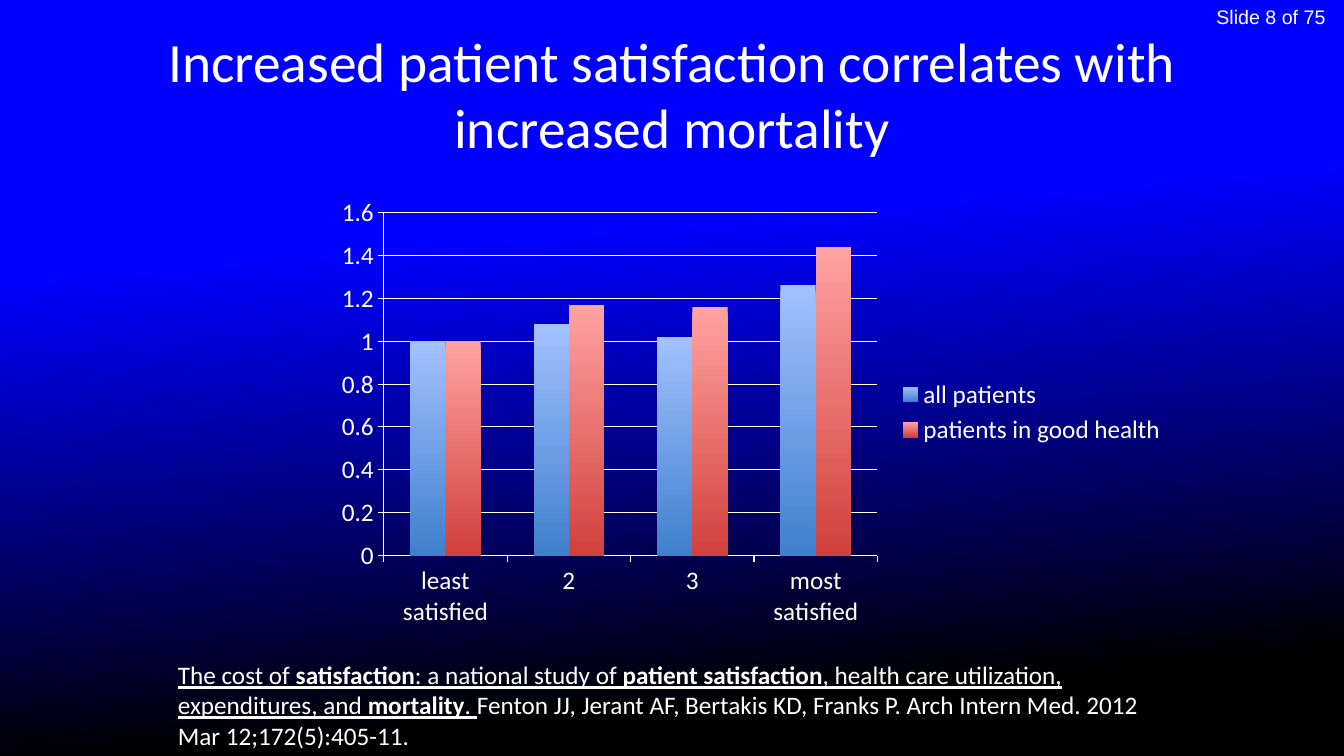
import pptx
import pptx.chart.data
import pptx.dml.color
import pptx.enum.chart
import pptx.enum.text
import pptx.util

Pt = pptx.util.Pt
RGBColor = pptx.dml.color.RGBColor
Align = pptx.enum.text.PP_ALIGN
Anchor = pptx.enum.text.MSO_ANCHOR

WHITE = RGBColor(0xFF, 0xFF, 0xFF)
BLUE = RGBColor(0x00, 0x00, 0xFF)
BLACK = RGBColor(0x00, 0x00, 0x00)
BAR_BLUES = (RGBColor(0xA3, 0xC1, 0xFF), RGBColor(0x3F, 0x80, 0xCD))
BAR_REDS = (RGBColor(0xFF, 0xA3, 0xA1), RGBColor(0xD1, 0x40, 0x3C))


def fill_gradient(fill, colors, positions, angle):
    fill.gradient()
    fill.gradient_angle = angle
    for stop, color, position in zip(fill.gradient_stops, colors, positions):
        stop.color.rgb = color
        stop.position = position


def add_text(slide, bounds, spans, size, font="Calibri", align=Align.LEFT, anchor=Anchor.TOP):
    box = slide.shapes.add_textbox(*[Pt(length) for length in bounds])
    frame = box.text_frame
    frame.word_wrap = True
    frame.vertical_anchor = anchor
    para = frame.paragraphs[0]
    para.alignment = align
    para.font.size = Pt(size)
    para.font.name = font
    para.font.color.rgb = WHITE
    for text, bold, underline in spans:
        span = para.add_run()
        span.text = text
        span.font.bold = bold
        span.font.underline = underline


deck = pptx.Presentation()
deck.slide_width = Pt(960)
deck.slide_height = Pt(540)
slide = deck.slides.add_slide(deck.slide_layouts[6])
fill_gradient(slide.background.fill, (BLUE, BLACK), (0.32, 0.88), 275)

add_text(slide, (794, 0, 160, 24.5), [("Slide 8 of 75", False, False)], 14,
         font="Arial", align=Align.RIGHT)
add_text(slide, (48, 21.5, 864, 90),
         [("Increased patient satisfaction correlates with increased mortality", False, False)],
         39.6, align=Align.CENTER, anchor=Anchor.MIDDLE)

chart_data = pptx.chart.data.CategoryChartData()
chart_data.categories = ["least satisfied", "2", "3", "most satisfied"]
chart_data.add_series("all patients", (1, 1.08, 1.02, 1.26))
chart_data.add_series("patients in good health", (1, 1.17, 1.16, 1.44))
chart = slide.shapes.add_chart(
    pptx.enum.chart.XL_CHART_TYPE.COLUMN_CLUSTERED,
    Pt(232), Pt(134.5), Pt(608.5), Pt(319.5), chart_data).chart
chart.has_title = False
chart.font.size = Pt(18)
chart.font.name = "Calibri"
chart.font.color.rgb = WHITE
chart.has_legend = True
chart.legend.position = pptx.enum.chart.XL_LEGEND_POSITION.RIGHT
chart.legend.include_in_layout = False

plot = chart.plots[0]
plot.gap_width = 150
plot.overlap = 0
plot.vary_by_categories = False
for series, colors in zip(plot.series, (BAR_BLUES, BAR_REDS)):
    fill_gradient(series.format.fill, colors, (0, 1), 270)
    series.format.line.fill.background()

chart.value_axis.has_major_gridlines = True
for axis in (chart.category_axis, chart.value_axis):
    axis.major_tick_mark = pptx.enum.chart.XL_TICK_MARK.OUTSIDE
for lines in (chart.category_axis, chart.value_axis, chart.value_axis.major_gridlines):
    lines.format.line.color.rgb = WHITE
    lines.format.line.width = Pt(0.75)

citation = [
    ("The cost of ", False, True),
    ("satisfaction", True, True),
    (": a national study of ", False, True),
    ("patient satisfaction", True, True),
    (", health care utilization, expenditures, and ", False, True),
    ("mortality", True, True),
    (". ", False, True),
    ("Fenton JJ, Jerant AF, Bertakis KD, Franks P. Arch Intern Med. "
     "2012 Mar 12;172(5):405-11.", False, False),
]
add_text(slide, (120, 467.5, 720, 72.5), citation, 18)

deck.save("out.pptx")
